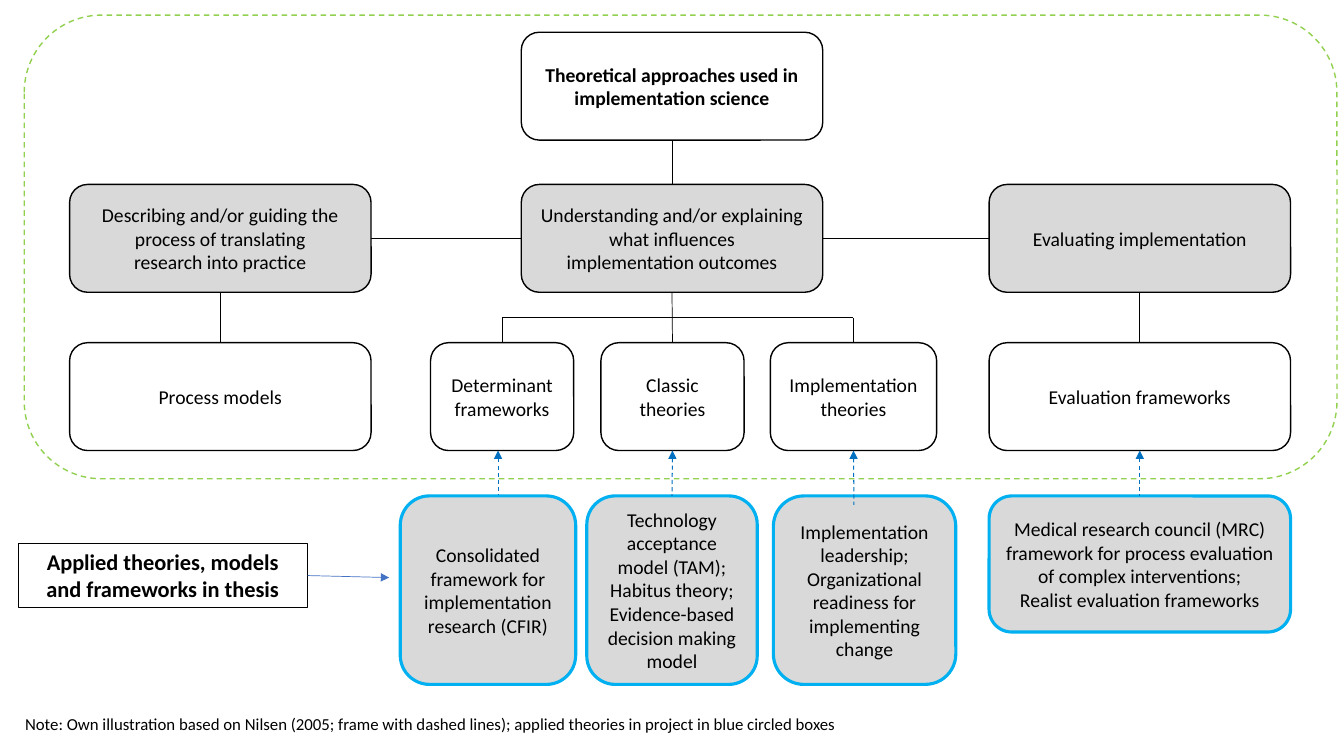
from dataclasses import dataclass

from lxml.etree import SubElement
from pptx import Presentation
from pptx.dml.color import RGBColor
from pptx.enum.dml import MSO_LINE
from pptx.enum.shapes import MSO_CONNECTOR, MSO_SHAPE
from pptx.enum.text import MSO_ANCHOR, MSO_AUTO_SIZE, PP_ALIGN
from pptx.oxml.ns import qn
from pptx.util import Inches, Pt


@dataclass(frozen=True)
class Theme:
    font: str = "Calibri"
    ink: str = "000000"
    white: str = "FFFFFF"
    grey: str = "D9D9D9"
    applied: str = "00B0F0"
    arrow: str = "0070C0"
    pointer: str = "4472C4"
    frame: str = "92D050"
    body: float = 14
    label: float = 16
    note: float = 12
    thin: float = 0.5
    medium: float = 0.75
    outline: float = 1
    thick: float = 2.25


T = Theme()
TOP, LEFT, BOTTOM, RIGHT = range(4)  # connection sites

# Grid in inches: columns are (left, width), rows are (top, height)
WIDE = 2.99
COLS = {
    "process": (0.69, WIDE), "centre": (5.17, WIDE), "evaluation": (9.81, WIDE),
    "determinant": (4.27, 1.42), "classic": (5.96, 1.42), "theories": (7.64, 1.65),
    "cfir": (3.97, 1.74), "tam": (5.82, 1.69), "leadership": (7.67, 1.81),
    "label": (0.18, 2.87), "note": (0.15, 8.45), "frame": (0.24, 13.02),
}
ROWS = {
    "root": (0.32, 1.07), "aims": (1.83, 1.07), "kinds": (3.4, 1.07),
    "applied": (4.92, 1.87), "applied_short": (4.92, 1.35),
    "label": (5.39, 0.64), "note": (7.03, 0.3), "frame": (0.15, 4.6),
}
BRANCH_Y = 3.15

# Each box: column, row, paragraphs
AIMS = [
    ("centre", "aims", ["Understanding and/or explaining what influences",
                        "implementation outcomes"]),
    ("evaluation", "aims", ["Evaluating implementation"]),
    ("process", "aims", ["Describing and/or guiding the process of translating",
                         "research into practice"]),
]
KINDS = [
    ("process", "kinds", ["Process models"]),
    ("theories", "kinds", ["Implementation theories"]),
    ("evaluation", "kinds", ["Evaluation frameworks"]),
    ("classic", "kinds", ["Classic", "theories"]),
    ("determinant", "kinds", ["Determinant", "frameworks"]),
]
APPLIED = [
    ("cfir", "applied", ["Consolidated framework for implementation research (CFIR)"]),
    ("tam", "applied", ["Technology acceptance model (TAM); Habitus theory; "
                        "Evidence-based decision making model"]),
    ("leadership", "applied", ["Implementation leadership; Organizational readiness "
                               "for implementing change"]),
    ("evaluation", "applied_short", ["Medical research council (MRC) framework for process "
                                     "evaluation of complex interventions;",
                                     "Realist evaluation frameworks"]),
]


def rgb(color):
    return RGBColor.from_string(color)


def cell(col, row):
    (left, width), (top, height) = COLS[col], ROWS[row]
    return [Inches(v) for v in (left, top, width, height)]


def write(sp, paragraphs, size=T.body, bold=False, align=PP_ALIGN.CENTER,
          anchor=MSO_ANCHOR.MIDDLE):
    tf = sp.text_frame
    tf.word_wrap = True
    tf.vertical_anchor = anchor
    for i, text in enumerate(paragraphs):
        p = tf.add_paragraph() if i else tf.paragraphs[0]
        p.alignment = align
        r = p.add_run()
        r.text = text
        r.font.name, r.font.size, r.font.bold = T.font, Pt(size), bold
        r.font.color.rgb = rgb(T.ink)
    return tf


def add_box(s, col, row, fill=None, line=T.ink, weight=T.outline,
            kind=MSO_SHAPE.ROUNDED_RECTANGLE):
    sp = s.shapes.add_shape(kind, *cell(col, row))
    sp.shadow.inherit = False
    if fill:
        sp.fill.solid()
        sp.fill.fore_color.rgb = rgb(fill)
    else:
        sp.fill.background()
    sp.line.color.rgb = rgb(line)
    sp.line.width = Pt(weight)
    return sp


def add_boxes(s, items, **style):
    boxes = {}
    for col, row, paragraphs in items:
        boxes[col] = add_box(s, col, row, **style)
        write(boxes[col], paragraphs)
    return boxes


def add_line(s, start, end, color=T.ink, weight=T.thin, dashed=False, arrow=None):
    """Each end is an (x, y) point in inches or a (shape, site) pair to join."""
    points = [(0, 0) if hasattr(e[0], "shape_id") else e for e in (start, end)]
    cx = s.shapes.add_connector(MSO_CONNECTOR.STRAIGHT,
                                *[Inches(v) for point in points for v in point])
    for e, join in ((start, cx.begin_connect), (end, cx.end_connect)):
        if hasattr(e[0], "shape_id"):
            join(*e)
    cx.line.color.rgb = rgb(color)
    cx.line.width = Pt(weight)
    if dashed:
        cx.line.dash_style = MSO_LINE.DASH
    if arrow:
        SubElement(cx.line._get_or_add_ln(), qn(f"a:{arrow}End"), type="triangle")
    SubElement(cx._element.spPr, qn("a:effectLst"))


def add_tree_lines(s, root, aims, kinds):
    centre = aims["centre"]
    add_line(s, (root, BOTTOM), (centre, TOP))
    add_line(s, (centre, LEFT), (aims["process"], RIGHT))
    add_line(s, (centre, RIGHT), (aims["evaluation"], LEFT))
    for aim, kind in (("process", "process"), ("centre", "classic"),
                      ("evaluation", "evaluation")):
        add_line(s, (aims[aim], BOTTOM), (kinds[kind], TOP))
    # Branch to the two outer kinds below the centre
    ends = [COLS[c][0] + COLS[c][1] / 2 for c in ("determinant", "theories")]
    add_line(s, (ends[0], BRANCH_Y), (ends[1], BRANCH_Y))
    for col, x in zip(("determinant", "theories"), ends):
        add_line(s, (kinds[col], TOP), (x, BRANCH_Y))


def add_applied_arrows(s, kinds, applied):
    for start, end in (
        ((kinds["classic"], BOTTOM), (applied["tam"], TOP)),
        ((4.94, 4.47), (4.94, 4.91)),
        ((kinds["theories"], BOTTOM), (8.47, 5.01)),
        ((kinds["evaluation"], BOTTOM), (applied["evaluation"], TOP)),
    ):
        add_line(s, start, end, T.arrow, T.medium, dashed=True, arrow="head")


def main():
    prs = Presentation()
    prs.slide_width, prs.slide_height = Inches(13.33), Inches(7.5)
    s = prs.slides.add_slide(prs.slide_layouts[6])

    # Tree of theoretical approaches
    root = add_box(s, "centre", "root", fill=T.white)
    write(root, ["Theoretical approaches used in implementation science"], bold=True)
    aims = add_boxes(s, AIMS, fill=T.grey)
    kinds = add_boxes(s, KINDS, fill=T.white)
    add_tree_lines(s, root, aims, kinds)

    # Theories applied in the thesis
    applied = add_boxes(s, APPLIED, fill=T.grey, line=T.applied, weight=T.thick)
    add_applied_arrows(s, kinds, applied)

    # Label with its pointer, and the note
    label = add_box(s, "label", "label", weight=T.medium, kind=MSO_SHAPE.RECTANGLE)
    tf = write(label, ["Applied theories, models and frameworks in thesis"],
               T.label, bold=True, anchor=MSO_ANCHOR.TOP)
    tf.auto_size = MSO_AUTO_SIZE.SHAPE_TO_FIT_TEXT
    note = s.shapes.add_textbox(*cell("note", "note"))
    tf = write(note, ["Note: Own illustration based on Nilsen (2005; frame with dashed "
                      "lines); applied theories in project in blue circled boxes"],
               T.note, align=PP_ALIGN.LEFT, anchor=MSO_ANCHOR.TOP)
    tf.auto_size = MSO_AUTO_SIZE.SHAPE_TO_FIT_TEXT
    add_line(s, (label, RIGHT), (3.86, 5.73), T.pointer, arrow="tail")

    # Dashed frame around the tree
    frame = add_box(s, "frame", "frame", line=T.frame)
    frame.line.dash_style = MSO_LINE.DASH

    prs.save("out.pptx")


if __name__ == "__main__":
    main()
